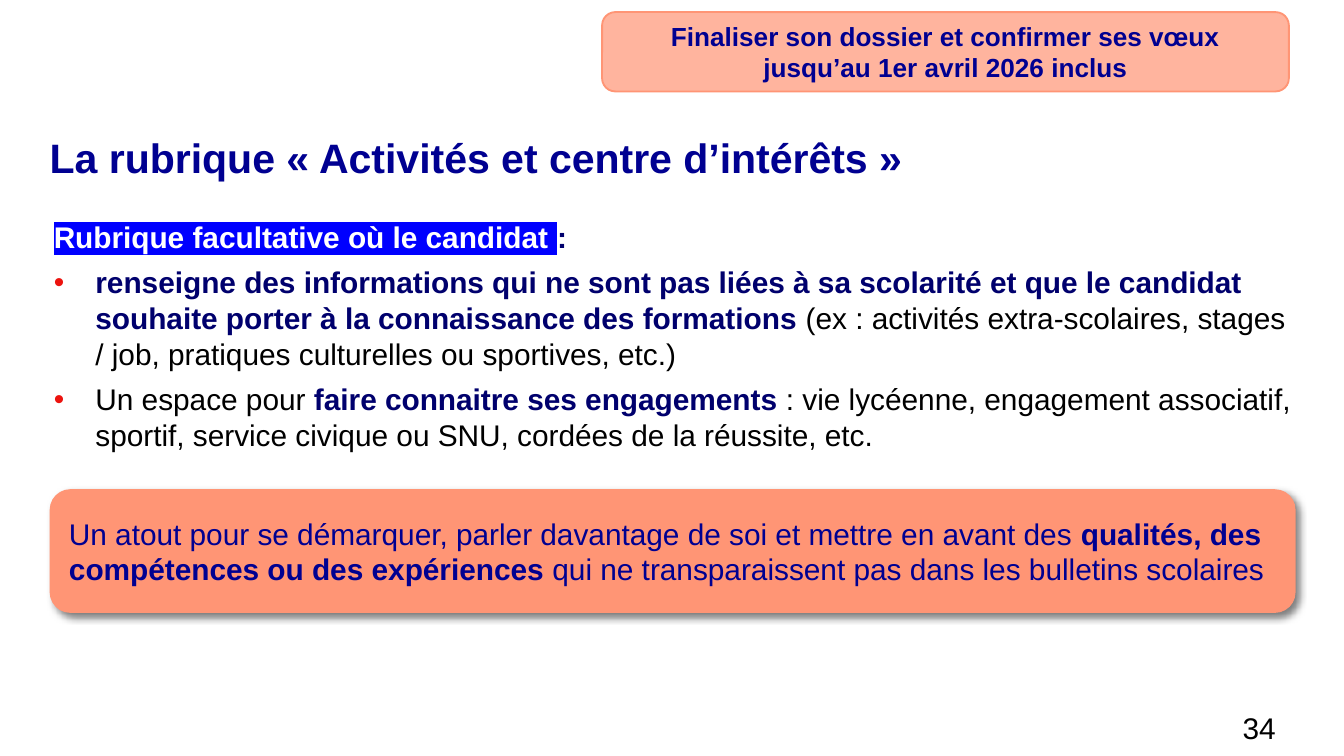
from lxml import etree
from pptx import Presentation
from pptx.dml.color import RGBColor
from pptx.enum import shapes, text
from pptx.oxml import parse_xml
from pptx.oxml.ns import nsdecls, qn
from pptx.util import Inches, Pt

NAVY = RGBColor(0x00, 0x00, 0x91)
DARK_NAVY = RGBColor(0x00, 0x00, 0x6D)
CORAL = RGBColor(0xFF, 0x95, 0x75)
RED = RGBColor(0xEC, 0x13, 0x0E)
BLUE = RGBColor(0x00, 0x00, 0xFF)
WHITE = RGBColor(0xFF, 0xFF, 0xFF)
BLACK = RGBColor(0x00, 0x00, 0x00)


def add_runs(paragraph, size, *pieces):
    """Add one run per (wording, colour, bold) piece."""
    for wording, color, bold in pieces:
        run = paragraph.add_run()
        run.text = wording
        run.font.name = "Arial"
        run.font.size = Pt(size)
        run.font.bold = bold
        run.font.color.rgb = color


def add_panel(left, top, width, height):
    """Add a coral rounded panel with vertically centred text."""
    panel = slide.shapes.add_shape(
        shapes.MSO_SHAPE.ROUNDED_RECTANGLE,
        Inches(left), Inches(top), Inches(width), Inches(height))
    panel.shadow.inherit = False
    panel.fill.solid()
    panel.fill.fore_color.rgb = CORAL
    panel.text_frame.vertical_anchor = text.MSO_ANCHOR.MIDDLE
    return panel


presentation = Presentation()
presentation.slide_width = Inches(10)
presentation.slide_height = Inches(10 * 9 / 16)
slide = presentation.slides.add_slide(presentation.slide_layouts[5])

# Title
title = slide.shapes.title
title.left, title.top = Inches(0.37), Inches(1.03)
title.width, title.height = Inches(9.21), Inches(0.79)
title.text_frame.vertical_anchor = text.MSO_ANCHOR.TOP
title.text_frame.auto_size = text.MSO_AUTO_SIZE.NONE
title_paragraph = title.text_frame.paragraphs[0]
title_paragraph.alignment = text.PP_ALIGN.LEFT
title_paragraph.line_spacing = 0.9
add_runs(title_paragraph, 22,
         ("La rubrique « Activités et centre d’intérêts »", NAVY, True))

# Body
body = slide.shapes.add_textbox(Inches(0.4), Inches(1.63), Inches(9.21), Inches(3.03))
body.text_frame.word_wrap = True
for frame in (title.text_frame, body.text_frame):
    frame.margin_left = frame.margin_right = 0
    frame.margin_top = frame.margin_bottom = 0

intro = body.text_frame.paragraphs[0]
intro.space_after = Pt(5)
add_runs(intro, 16,
         ("Rubrique facultative où le candidat ", WHITE, True),
         (":", DARK_NAVY, True))
highlight = parse_xml(
    f'<a:highlight {nsdecls("a")}><a:srgbClr val="{BLUE}"/></a:highlight>')
intro.runs[0].font.fill._xPr.find(qn("a:solidFill")).addnext(highlight)

bullets = [
    [("renseigne des informations qui ne sont pas liées à sa scolarité et que "
      "le candidat souhaite porter à la connaissance des formations ", DARK_NAVY, True),
     ("(ex : activités extra-scolaires, stages / job, pratiques culturelles "
      "ou sportives, etc.)", BLACK, False)],
    [("Un espace pour ", BLACK, False),
     ("faire connaitre ses engagements ", DARK_NAVY, True),
     (": vie lycéenne, engagement associatif, sportif, service civique ou SNU, "
      "cordées de la réussite, etc.", BLACK, False)],
]
for pieces in bullets:
    paragraph = body.text_frame.add_paragraph()
    paragraph.space_after = Pt(5)
    properties = paragraph._p.get_or_add_pPr()
    properties.set("marL", str(Inches(0.31)))
    properties.set("indent", str(-Inches(0.31)))
    bullet_color = etree.SubElement(properties, qn("a:buClr"))
    etree.SubElement(bullet_color, qn("a:srgbClr"), val=str(RED))
    etree.SubElement(properties, qn("a:buFont"), typeface="Arial")
    etree.SubElement(properties, qn("a:buChar"), char="•")
    add_runs(paragraph, 16, *pieces)

# Slide number
number_box = slide.shapes.add_textbox(Inches(8.31), Inches(5.23), Inches(1.28), Inches(0.39))
number_box.text_frame.word_wrap = True
number_paragraph = number_box.text_frame.paragraphs[0]
number_paragraph.alignment = text.PP_ALIGN.RIGHT
add_runs(number_paragraph, 16, ("34", BLACK, False))

# Key message with a soft shadow
message = add_panel(0.37, 3.64, 9.27, 0.92)
message.line.fill.background()
message_paragraph = message.text_frame.paragraphs[0]
message_paragraph.alignment = text.PP_ALIGN.LEFT
add_runs(message_paragraph, 16,
         ("Un atout pour se démarquer, parler davantage de soi et mettre en "
          "avant des ", NAVY, False),
         ("qualités, des compétences ou des expériences", NAVY, True),
         (" qui ne transparaissent pas dans les bulletins scolaires", NAVY, False))
effects = message._element.spPr.find(qn("a:effectLst"))
effects.append(parse_xml(
    f'<a:outerShdw {nsdecls("a")} blurRad="{Pt(4)}" dist="{Pt(3)}" dir="2700000" '
    'algn="tl" rotWithShape="0"><a:srgbClr val="000000"><a:alpha val="50000"/>'
    '</a:srgbClr></a:outerShdw>'))

# Deadline banner, slightly transparent
banner = add_panel(4.48, 0.09, 5.11, 0.59)
banner_color = banner._element.spPr.find(qn("a:solidFill")).find(qn("a:srgbClr"))
etree.SubElement(banner_color, qn("a:alpha"), val="70000")
banner.line.color.rgb = CORAL
banner.line.width = Pt(1)
banner_paragraph = banner.text_frame.paragraphs[0]
banner_paragraph.alignment = text.PP_ALIGN.CENTER
add_runs(banner_paragraph, 14,
         ("Finaliser son dossier et confirmer ses vœux jusqu’au 1er avril 2026 inclus",
          NAVY, True))

presentation.save("out.pptx")
